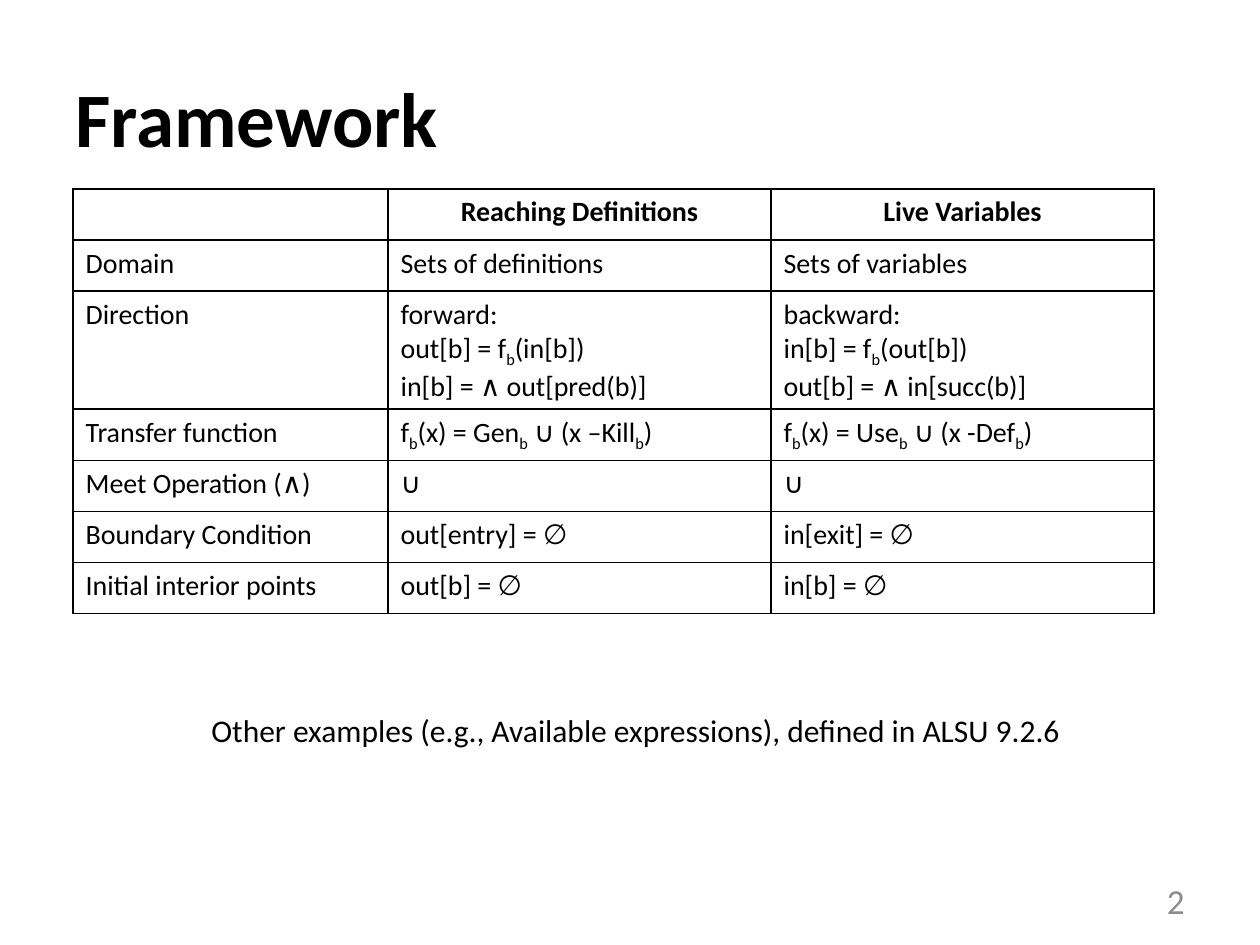
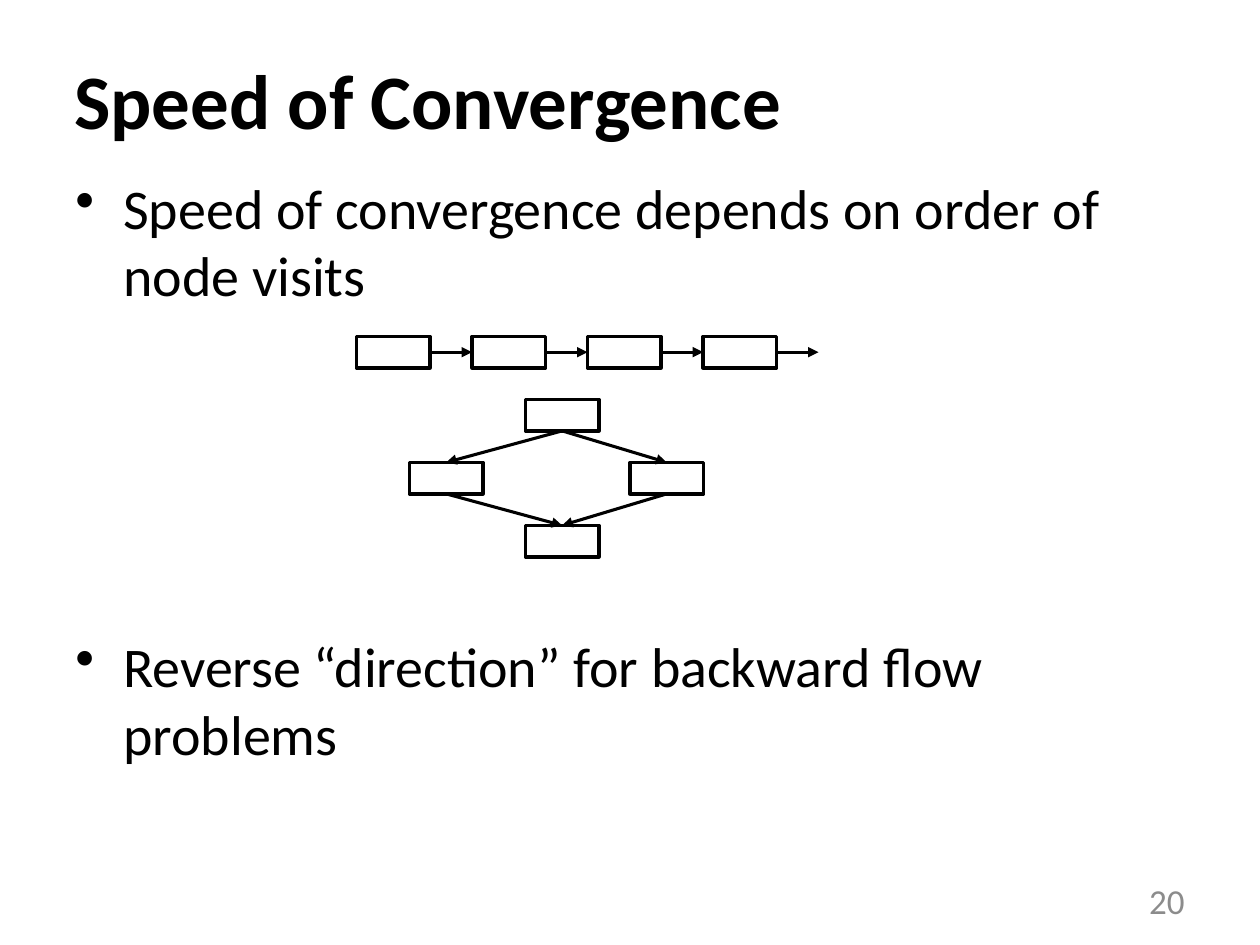
from lxml import etree
from pptx import Presentation
from pptx import util as u
from pptx.dml import color
from pptx.enum import shapes, text
from pptx.oxml import ns

FONT = "Calibri"
BLACK = "000000"
GREY = "8C8C8C"
BOX_WIDTH, BOX_HEIGHT = 7 / 12, 0.25
TOP, LEFT, BOTTOM, RIGHT = range(4)

FRAMEWORK = [
    ["", "Reaching Definitions", "Live Variables"],
    ["Domain", "Sets of definitions", "Sets of variables"],
    ["Direction",
     "forward:\vout[b] = f_b(in[b])\nin[b] = ∧ out[pred(b)]",
     "backward: \vin[b] = f_b(out[b])\nout[b] = ∧ in[succ(b)]"],
    ["Transfer function", "f_b(x) = Gen_b ∪ (x –Kill_b)", "f_b(x) = Use_b ∪ (x -Def_b)"],
    ["Meet Operation (∧)", "∪", "∪"],
    ["Boundary Condition", "out[entry] = ∅", "in[exit] = ∅"],
    ["Initial interior points", "out[b] = ∅", "in[b] = ∅"],
]


def rgb(value):
    return color.RGBColor.from_string(value)


def sub_element(parent, tag, **attributes):
    return etree.SubElement(parent, ns.qn(tag), attributes)


def style(para, size, hue=BLACK, bold=False, align=text.PP_ALIGN.LEFT):
    para.alignment = align
    para.font.name = FONT
    para.font.size = u.Pt(size)
    para.font.bold = bold
    para.font.color.rgb = rgb(hue)


def add_text(page, place, words, size, anchor=text.MSO_ANCHOR.TOP, wrap=True, **look):
    box = page.shapes.add_textbox(*map(u.Inches, place))
    frame = box.text_frame
    frame.word_wrap = wrap
    frame.vertical_anchor = anchor
    frame.text = words
    for para in frame.paragraphs:
        style(para, size, **look)
    return box


def add_page(deck, title, title_left, title_top, number):
    page = deck.slides.add_slide(deck.slide_layouts[6])
    add_text(page, (title_left, title_top, 9, 1.25), title, 44,
             text.MSO_ANCHOR.MIDDLE, bold=True)
    add_text(page, (7.17, 6.95, 2.33, 0.4), number, 20,
             text.MSO_ANCHOR.MIDDLE, hue=GREY, align=text.PP_ALIGN.RIGHT)
    return page


def write_formula(para, formula):
    start, *rest = formula.split("_")
    para.text = start
    for piece in rest:
        subscript = para.add_run()
        subscript.text = piece[0]
        subscript._r.get_or_add_rPr().set("baseline", "-25000")
        para.add_run().text = piece[1:]


def border_cell(cell):
    properties = cell._tc.get_or_add_tcPr()
    for side in ("a:lnL", "a:lnR", "a:lnT", "a:lnB"):
        line = sub_element(properties, side, w=str(u.Pt(1)))
        fill = sub_element(line, "a:solidFill")
        sub_element(fill, "a:srgbClr", val=BLACK)


def add_grid(page, rows, left, top, widths, row_height):
    frame = page.shapes.add_table(
        len(rows), len(widths), u.Inches(left), u.Inches(top),
        u.Inches(sum(widths)), u.Inches(row_height * len(rows)))
    table = frame.table
    table.first_row = table.horz_banding = False
    for column, width in zip(table.columns, widths):
        column.width = u.Inches(width)
    for row_index, row in enumerate(rows):
        table.rows[row_index].height = u.Inches(row_height)
        heading = row_index == 0
        align = text.PP_ALIGN.CENTER if heading else text.PP_ALIGN.LEFT
        for column_index, words in enumerate(row):
            cell = table.cell(row_index, column_index)
            border_cell(cell)
            cell.fill.background()
            for number, formula in enumerate(words.split("\n")):
                frame = cell.text_frame
                para = frame.add_paragraph() if number else frame.paragraphs[0]
                write_formula(para, formula)
                style(para, 16, bold=heading, align=align)


def add_bullets(page, place, items, gap):
    box = add_text(page, place, "\n".join(items), 32)
    for index, para in enumerate(box.text_frame.paragraphs):
        properties = para._p.get_or_add_pPr()
        properties.set("marL", str(u.Inches(0.38)))
        properties.set("indent", str(u.Inches(-0.38)))
        bullet = etree.Element(ns.qn("a:buChar"), char="•")
        properties.find(ns.qn("a:defRPr")).addprevious(bullet)
        para.space_before = u.Pt(gap if index else 0)


def add_node(page, left, top):
    node = page.shapes.add_shape(
        shapes.MSO_SHAPE.RECTANGLE, *map(u.Inches, (left, top, BOX_WIDTH, BOX_HEIGHT)))
    node.shadow.inherit = False
    node.fill.background()
    node.line.color.rgb = rgb(BLACK)
    node.line.width = u.Pt(2)
    return node


def add_arrow(page, start, start_side, end=None, end_side=LEFT, end_point=(0, 0)):
    x, y = map(u.Inches, end_point)
    arrow = page.shapes.add_connector(shapes.MSO_CONNECTOR.STRAIGHT, x, y, x, y)
    arrow.begin_connect(start, start_side)
    if end is not None:
        arrow.end_connect(end, end_side)
    arrow.line.color.rgb = rgb(BLACK)
    arrow.line.width = u.Pt(1.75)
    sub_element(arrow.line._get_or_add_ln(), "a:tailEnd", type="triangle")
    sub_element(arrow._element.spPr, "a:effectLst")


def add_chain(page, left, top, count):
    pitch = BOX_WIDTH + 1 / 3
    nodes = [add_node(page, left + index * pitch, top) for index in range(count)]
    for start, end in zip(nodes, nodes[1:]):
        add_arrow(page, start, RIGHT, end, LEFT)
    exit_point = (left + count * pitch, top + BOX_HEIGHT / 2)
    add_arrow(page, nodes[-1], RIGHT, end_point=exit_point)


def add_diamond(page):
    entry = add_node(page, 4.17, 3.17)
    merge = add_node(page, 4.17, 4.17)
    for branch_left in (5, 3.25):
        branch = add_node(page, branch_left, 3.67)
        add_arrow(page, entry, BOTTOM, branch, TOP)
        add_arrow(page, branch, BOTTOM, merge, TOP)


def main():
    deck = Presentation()
    deck.slide_width, deck.slide_height = u.Inches(10), u.Inches(7.5)

    page = add_page(deck, "Framework", 0.5, 0.3, "2")
    add_grid(page, FRAMEWORK, 0.58, 1.5, (2.5, 3.04, 3.04), 2.84 / 7)
    note = add_text(page, (1.58, 5.59, 6.96, 0.4),
                    "Other examples (e.g., Available expressions), defined in ALSU 9.2.6",
                    18, wrap=False)
    note.text_frame.auto_size = text.MSO_AUTO_SIZE.SHAPE_TO_FIT_TEXT

    page = add_page(deck, "Speed of Convergence", 0.49, 0.16, "20")
    add_bullets(page, (0.5, 1.33, 9, 5.37),
                ["Speed of convergence depends on order of node visits",
                 "Reverse “direction” for backward flow problems"], 185)
    add_chain(page, 2.83, 2.67, 4)
    add_diamond(page)

    deck.save("out.pptx")


if __name__ == "__main__":
    main()
